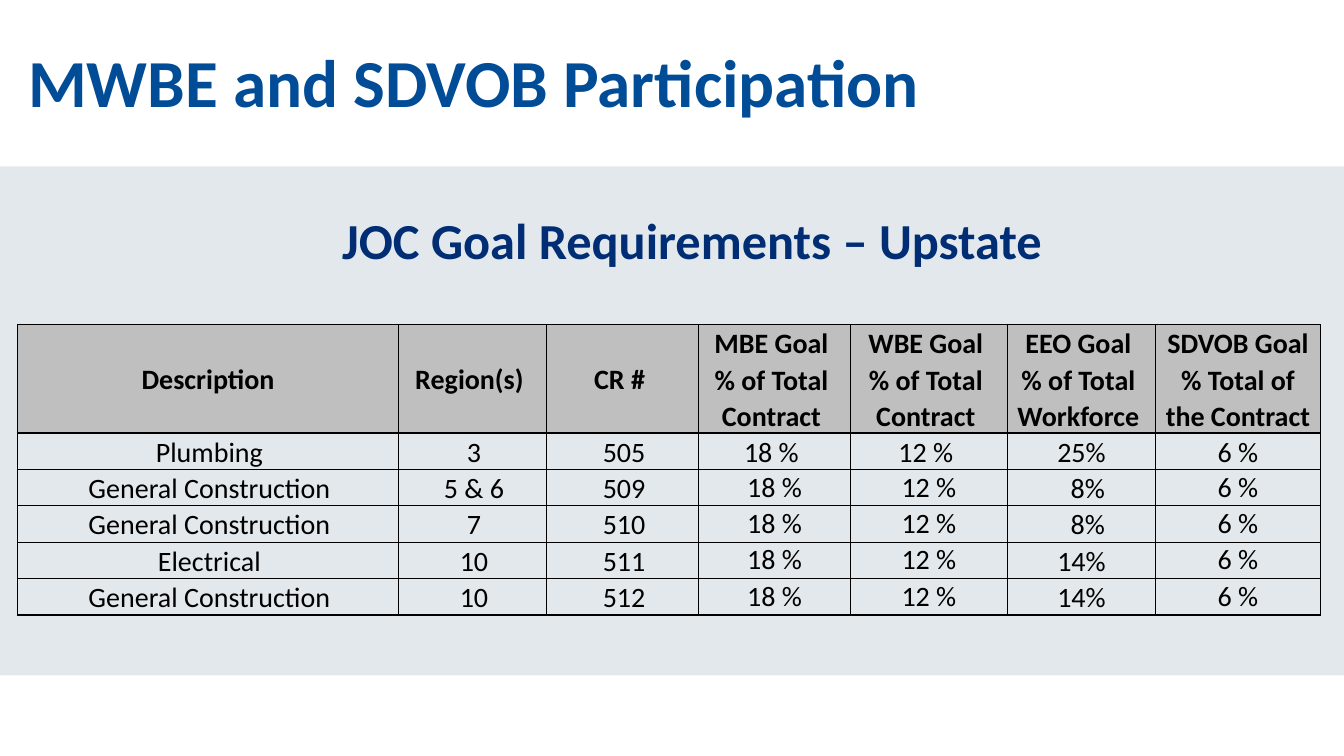
from dataclasses import dataclass

from lxml import etree
from pptx import Presentation
from pptx.dml.color import RGBColor
from pptx.enum import shapes, text
from pptx.oxml import ns
from pptx.util import Pt

FACE = "Calibri"
BLACK = "000000"


@dataclass
class Label:
    words: str
    box: tuple[float, float, float, float]
    size: float
    color: str
    align: text.PP_ALIGN
    anchor: text.MSO_ANCHOR
    lead: float = 1.0


@dataclass
class Column:
    head: str
    width: float
    values: tuple[str, ...]
    left: float = 5.8
    right: float = 5.8
    lead: float = 1.03


LABELS = [
    Label("MWBE and SDVOB Participation", (13, 16, 937, 90), 48, "004C97",
          text.PP_ALIGN.LEFT, text.MSO_ANCHOR.MIDDLE, 0.9),
    Label("JOC Goal Requirements – Upstate", (179.5, 145.5, 630, 51), 36, "002D73",
          text.PP_ALIGN.CENTER, text.MSO_ANCHOR.TOP),
]

BUILD = "General Construction"
COLUMNS = [
    Column("Description", 272, ("Plumbing", BUILD, BUILD, "Electrical", BUILD), 7, 5, 1.07),
    Column("Region(s)", 106, ("3", "5 & 6", "7", "10", "10"), 7, 5, 1.07),
    Column("CR #", 108.5, ("505", "509", "510", "511", "512"), 7, 5, 1.07),
    Column("MBE Goal\n% of Total\nContract", 108.5, ("18 %",) * 5),
    Column("WBE Goal\n% of Total\nContract", 112, ("12 %",) * 5),
    Column("EEO Goal\n% of Total\nWorkforce", 106, ("25%", "8%", "8%", "14%", "14%"), lead=1.07),
    Column("SDVOB Goal\n% Total of the Contract", 117.5, ("6 %",) * 5),
]
HEAD, ROW = 77.5, 26
NUDGE = 4.5  # one space at 20 points


def rgb(code: str) -> RGBColor:
    return RGBColor.from_string(code)


def style(para, size: float, color: str, bold: bool, align, lead: float) -> None:
    para.alignment = align
    para.line_spacing = lead
    font = para.font
    font.name, font.size, font.bold = FACE, Pt(size), bold
    font.color.rgb = rgb(color)


def draw_band(slide) -> None:
    band = slide.shapes.add_shape(shapes.MSO_SHAPE.RECTANGLE, 0, Pt(118.8), Pt(960), Pt(363.6))
    band.shadow.inherit = False
    band.line.fill.background()
    band.fill.solid()
    band.fill.fore_color.rgb = rgb("BFCED6")
    tint = band.fill._xPr.find(".//" + ns.qn("a:srgbClr"))
    etree.SubElement(tint, ns.qn("a:alpha"), val="45000")


def draw_label(slide, label: Label) -> None:
    frame = slide.shapes.add_textbox(*map(Pt, label.box)).text_frame
    frame.word_wrap = True
    frame.vertical_anchor = label.anchor
    frame.text = label.words
    style(frame.paragraphs[0], label.size, label.color, True, label.align, label.lead)


def add_border(cell) -> None:
    props = cell._tc.get_or_add_tcPr()
    for side in ("lnL", "lnR", "lnT", "lnB"):
        line = etree.SubElement(props, ns.qn("a:" + side), w=str(Pt(1)))
        fill = etree.SubElement(line, ns.qn("a:solidFill"))
        etree.SubElement(fill, ns.qn("a:srgbClr"), val=BLACK)


def fill_cell(cell, words: str, left: float, right: float, lead: float, head: bool) -> None:
    add_border(cell)
    cell.margin_left, cell.margin_right = Pt(left), Pt(right)
    cell.margin_top = cell.margin_bottom = 0
    if head:
        cell.fill.solid()
        cell.fill.fore_color.rgb = rgb("BFBFBF")
    else:
        cell.fill.background()
    cell.text = words
    for para in cell.text_frame.paragraphs:
        style(para, 20, BLACK, head, text.PP_ALIGN.CENTER, lead)


def draw_table(slide) -> None:
    count = len(COLUMNS[0].values)
    width = sum(col.width for col in COLUMNS)
    table = slide.shapes.add_table(count + 1, len(COLUMNS), Pt(12.6), Pt(231.8),
                                   Pt(width), Pt(HEAD + count * ROW)).table
    table.first_row = table.horz_banding = False
    for i, row in enumerate(table.rows):
        row.height = Pt(ROW if i else HEAD)
    for c, col in enumerate(COLUMNS):
        table.columns[c].width = Pt(col.width)
        # Inner headings sit slightly left of centre
        inner = 0 < c < len(COLUMNS) - 1
        top = table.cell(0, c)
        fill_cell(top, col.head, 5.8, 5.8 + NUDGE * inner, 1.07, True)
        if "\n" not in col.head:
            top.vertical_anchor = text.MSO_ANCHOR.MIDDLE
        for r, value in enumerate(col.values, 1):
            # Single-digit shares line up with the two-digit ones
            left = col.left + 2 * NUDGE * (value == "8%")
            right = col.right + NUDGE * (r == 1 and c in (3, 4))
            lead = 1.07 if r == 1 else col.lead
            fill_cell(table.cell(r, c), value, left, right, lead, False)


def main() -> None:
    deck = Presentation()
    deck.slide_width, deck.slide_height = Pt(960), Pt(540)
    slide = deck.slides.add_slide(deck.slide_layouts[6])
    # Background band
    draw_band(slide)
    # Title and heading
    for label in LABELS:
        draw_label(slide, label)
    # Goals by contract
    draw_table(slide)
    deck.save("out.pptx")


if __name__ == "__main__":
    main()
